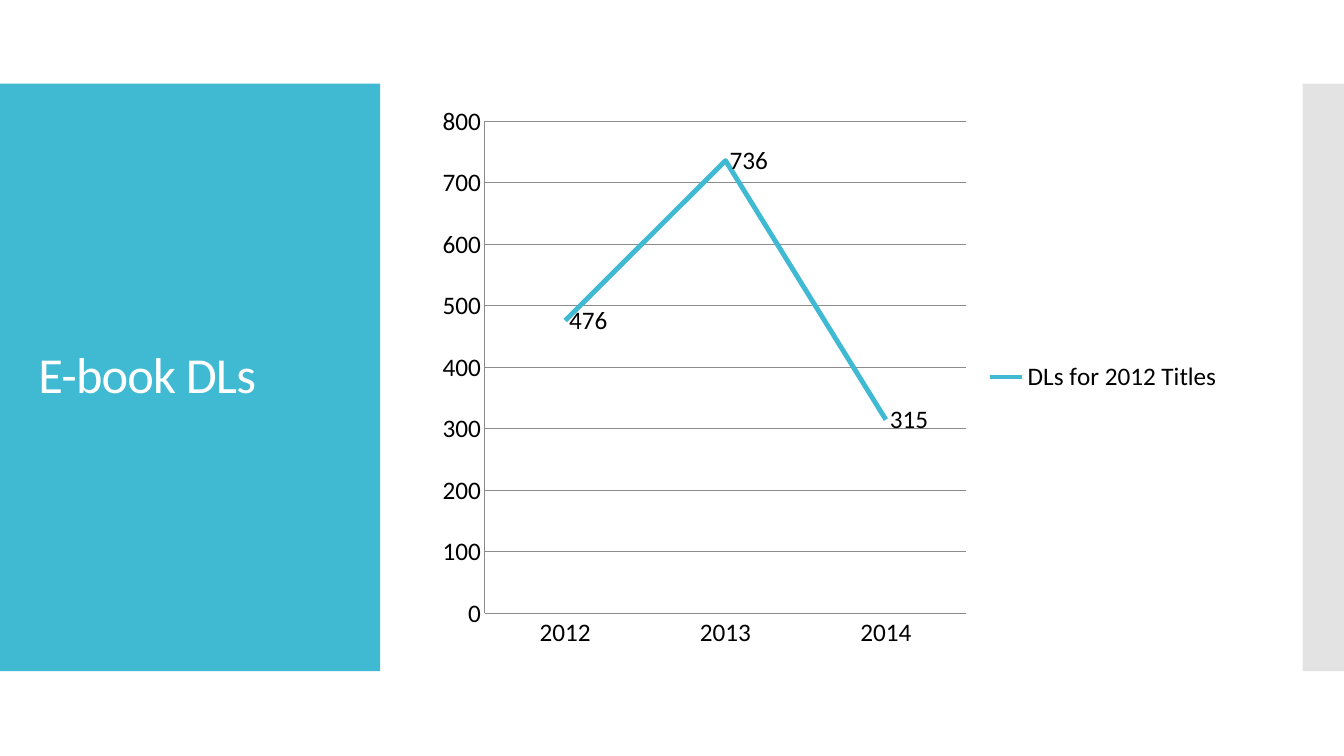
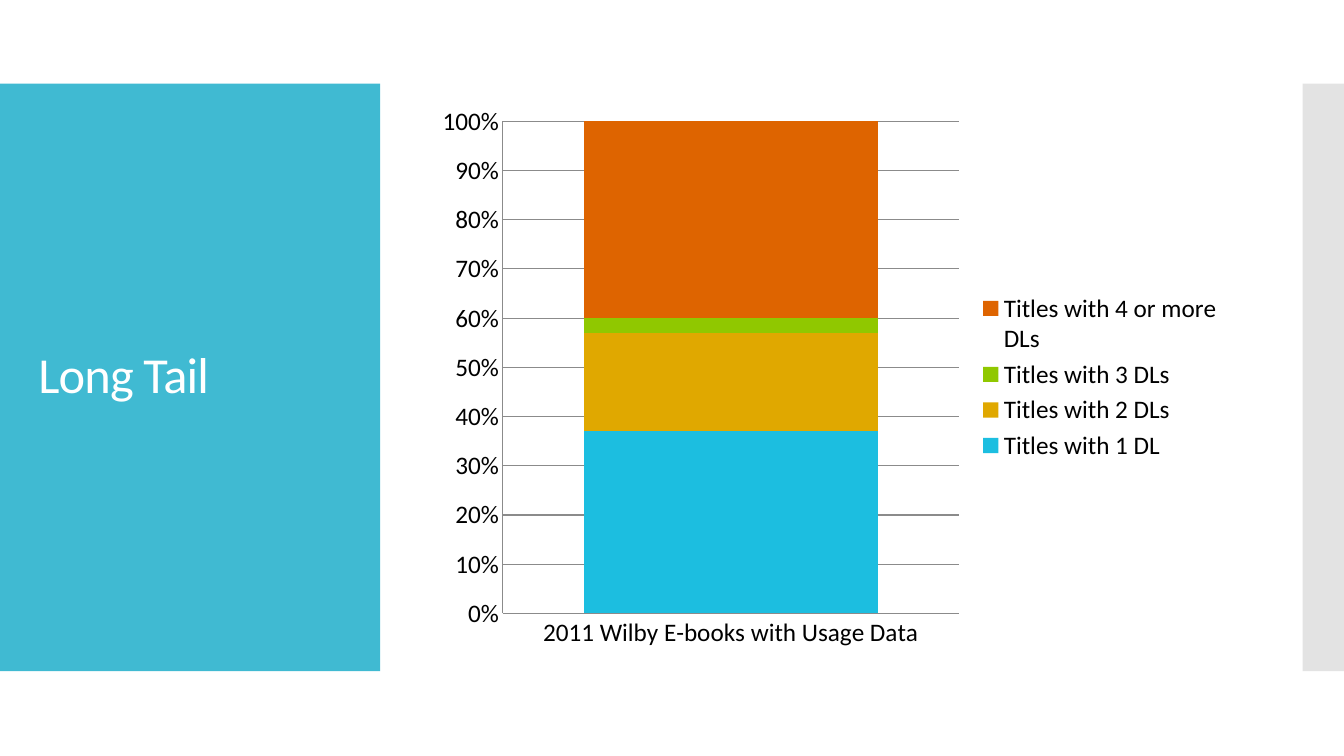
from dataclasses import dataclass

from lxml.etree import SubElement
from pptx import Presentation
from pptx.chart.data import CategoryChartData as Data
from pptx.dml.color import RGBColor as RGB
from pptx.enum.chart import (XL_CHART_TYPE as Kind, XL_LABEL_POSITION as Spot,
                             XL_LEGEND_POSITION as Side, XL_MARKER_STYLE as Mark,
                             XL_TICK_MARK as Tick)
from pptx.enum.shapes import MSO_SHAPE as Shape
from pptx.enum.text import MSO_ANCHOR as Anchor, PP_ALIGN as Align
from pptx.oxml.ns import qn
from pptx.util import Inches, Pt


@dataclass(frozen=True)
class Theme:
    font: str = "Calibri"
    head: int = 36
    text: int = 18
    teal: RGB = RGB(0x40, 0xBA, 0xD2)
    gray: RGB = RGB(0xC8, 0xC8, 0xC8)
    rule: RGB = RGB(0x8B, 0x8B, 0x8B)
    white: RGB = RGB(0xFF, 0xFF, 0xFF)
    black: RGB = RGB(0, 0, 0)
    stack: tuple = (RGB(0x1C, 0xBE, 0xE0), RGB(0xE0, 0xA8, 0x00),
                    RGB(0x90, 0xC8, 0x00), RGB(0xDE, 0x64, 0x00))


class Deck:
    def __init__(self, theme):
        self.theme = theme
        self.prs = Presentation()
        self.prs.slide_width = Inches(13.33)
        self.prs.slide_height = Inches(7.5)
        self.slide = None

    def start(self, title):
        """Add a slide with its side bands and title."""
        self.slide = self.prs.slides.add_slide(self.prs.slide_layouts[5])
        self.band(0, 3.77, self.theme.teal)
        self.band(12.92, 0.41, self.theme.gray, 50)
        self.title(title)

    def band(self, left, width, color, alpha=100):
        """Place a band behind the title."""
        shapes = self.slide.shapes
        band = shapes.add_shape(Shape.RECTANGLE, Inches(left), Inches(0.83),
                                Inches(width), Inches(5.83))
        band.shadow.inherit = False
        band.fill.solid()
        band.fill.fore_color.rgb = color
        band.line.fill.background()
        if alpha < 100:
            tint = next(band.element.spPr.iter(qn("a:srgbClr")))
            SubElement(tint, qn("a:alpha")).set("val", str(alpha * 1000))
        shapes.title.element.addprevious(band.element)

    def title(self, text):
        box = self.slide.shapes.title
        box.left, box.top = Inches(0.28), Inches(1.23)
        box.width, box.height = Inches(3.22), Inches(5.03)
        frame = box.text_frame
        frame.word_wrap = True
        frame.vertical_anchor = Anchor.MIDDLE
        para = frame.paragraphs[0]
        para.alignment = Align.LEFT
        para.line_spacing = 0.9
        run = para.add_run()
        run.text = text
        self.style(run.font, self.theme.head, self.theme.white)
        run.font._element.set("spc", "-60")

    def style(self, font, size, color):
        font.name = self.theme.font
        font.size = Pt(size)
        font.color.rgb = color

    def chart(self, kind, cats, series, top, step, form):
        data = Data()
        data.categories = cats
        for name, vals in series:
            data.add_series(name, vals)
        chart = self.slide.shapes.add_chart(
            kind, Inches(4.23), Inches(0.94), Inches(8), Inches(5.6), data).chart
        self.style(chart.font, self.theme.text, self.theme.black)
        chart.has_title = False
        chart.has_legend = True
        chart.legend.position = Side.RIGHT
        chart.legend.include_in_layout = False
        axis = chart.value_axis
        axis.minimum_scale, axis.maximum_scale = 0, top
        axis.major_unit = step
        axis.has_major_gridlines = True
        axis.tick_labels.number_format = form
        axis.tick_labels.number_format_is_linked = False
        for side in (axis, chart.category_axis):
            side.major_tick_mark = side.minor_tick_mark = Tick.NONE
            self.rule(side.format.line)
        self.rule(axis.major_gridlines.format.line)
        return chart.plots[0]

    def rule(self, line):
        line.color.rgb = self.theme.rule
        line.width = Pt(0.75)

    def trend(self, cats, series, top, step):
        """Add a line chart with value labels."""
        plot = self.chart(Kind.LINE, cats, series, top, step, "General")
        plot.vary_by_categories = False
        for line in plot.series:
            line.smooth = False
            line.marker.style = Mark.NONE
            line.format.line.color.rgb = self.theme.teal
            line.format.line.width = Pt(3.5)
            labels = line.data_labels
            labels.show_value = True
            labels.position = Spot.RIGHT

    def stack(self, cats, series):
        """Add a column chart stacked to 100%."""
        plot = self.chart(Kind.COLUMN_STACKED_100, cats, series, 1, 0.1, "0%")
        plot.vary_by_categories = False
        plot.gap_width, plot.overlap = 55, 100
        for part, color in zip(plot.series, self.theme.stack):
            part.format.fill.solid()
            part.format.fill.fore_color.rgb = color

    def save(self):
        self.prs.save("out.pptx")


def main():
    deck = Deck(Theme())
    deck.start("E-book DLs")
    deck.trend(["2012", "2013", "2014"],
               [("DLs for 2012 Titles", (476, 736, 315))], 800, 100)
    deck.start("Long Tail")
    deck.stack(["2011 Wilby E-books with Usage Data"],
               [("Titles with 1 DL", (37,)), ("Titles with 2 DLs", (20,)),
                ("Titles with 3 DLs", (3,)), ("Titles with 4 or more DLs", (40,))])
    deck.save()


if __name__ == "__main__":
    main()
